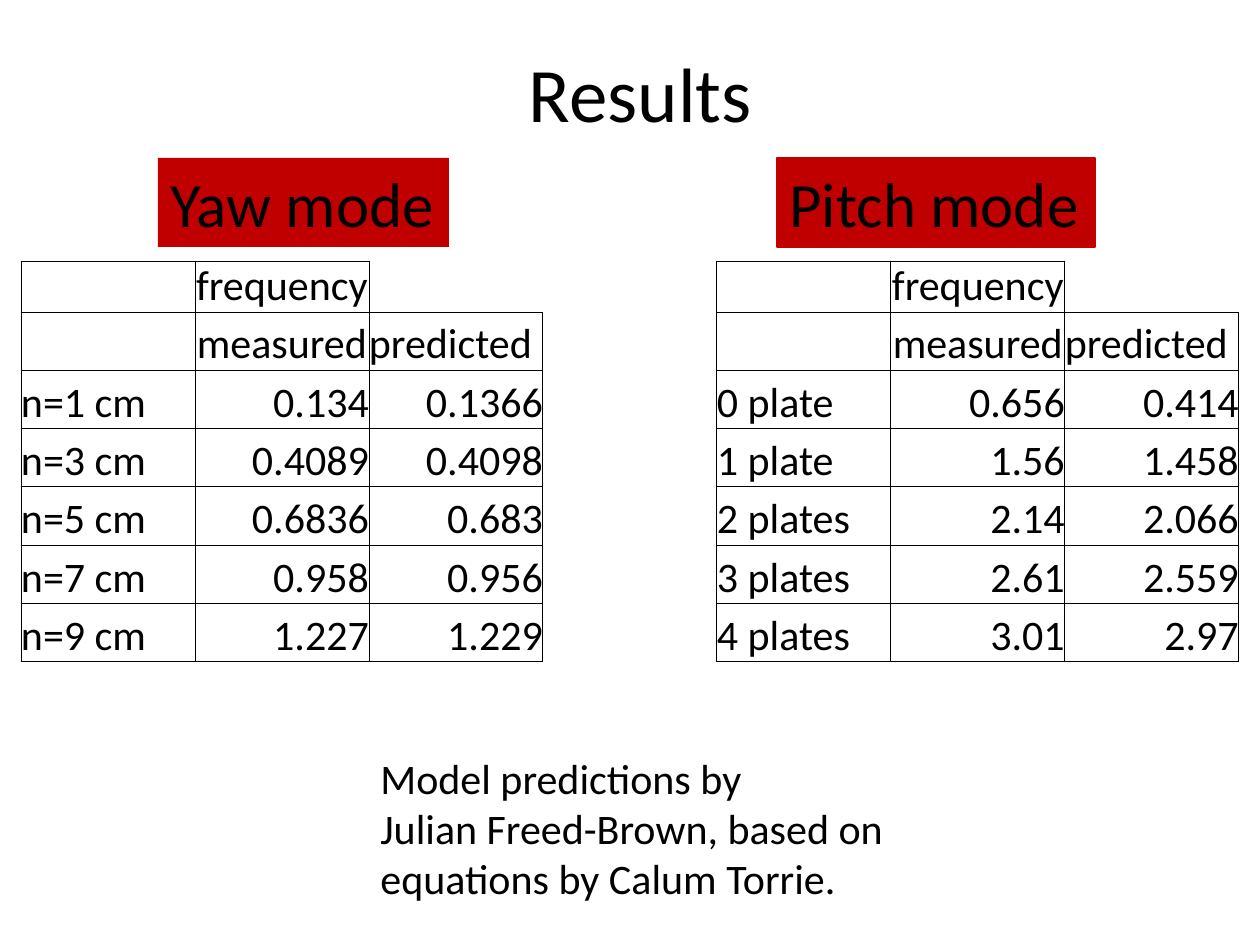
from lxml.etree import SubElement
from pptx import Presentation
from pptx.dml.color import RGBColor
from pptx.enum.shapes import MSO_SHAPE
from pptx.enum.text import MSO_ANCHOR, MSO_AUTO_SIZE, PP_ALIGN
from pptx.oxml.ns import qn
from pptx.util import Pt

# Content
TITLE = "Results"
CREDIT = [
    "Model predictions by",
    "Julian Freed-Brown, based on",
    "equations by Calum Torrie.",
]
HEADERS = [["", "frequency", None], ["", "measured", "predicted"]]
YAW = HEADERS + [
    ["n=1 cm", "0.134", "0.1366"],
    ["n=3 cm", "0.4089", "0.4098"],
    ["n=5 cm", "0.6836", "0.683"],
    ["n=7 cm", "0.958", "0.956"],
    ["n=9 cm", "1.227", "1.229"],
]
PITCH = HEADERS + [
    ["0 plate", "0.656", "0.414"],
    ["1 plate", "1.56", "1.458"],
    ["2 plates", "2.14", "2.066"],
    ["3 plates", "2.61", "2.559"],
    ["4 plates", "3.01", "2.97"],
]
# None marks a cell without a border of its own
ROWS = [yaw + [None] + pitch for yaw, pitch in zip(YAW, PITCH)]

# Boxes in px: left, top, width, height
TITLE_BOX = (105, -10, 1071, 203)
CREDIT_BOX = (368, 746, 588, 165)
TABLE_BOX = (21, 261, 1218, 401)
HEADER_HEIGHT = 51
MODES = [
    ("Yaw mode", (158, 158, 291, 89), False),
    ("Pitch mode", (777, 158, 318, 89), True),
]

BLACK = RGBColor(0, 0, 0)
RED = RGBColor(0xC0, 0, 0)
FONT = "Calibri"
EMU_PER_PX = 914400 / 126
SIDES = {"lnL": (0, -1), "lnR": (0, 1), "lnT": (-1, 0), "lnB": (1, 0)}


def px(value):
    return round(value * EMU_PER_PX)


def set_all(target, values):
    for name, value in values.items():
        setattr(target, name, value)


def write(text_frame, lines, size, alignment=PP_ALIGN.LEFT):
    for index, line in enumerate(lines):
        paragraph = text_frame.add_paragraph() if index else text_frame.paragraphs[0]
        paragraph.alignment = alignment
        run = paragraph.add_run()
        run.text = line
        set_all(run.font, {"name": FONT, "size": Pt(size)})
        run.font.color.rgb = BLACK


def has_border(row, column):
    inside = 0 <= row < len(ROWS) and 0 <= column < len(ROWS[0])
    return inside and ROWS[row][column] is not None


def draw_borders(cell, row, column):
    properties = cell._tc.get_or_add_tcPr()
    for index, (tag, (down, right)) in enumerate(SIDES.items()):
        line = properties.makeelement(qn(f"a:{tag}"), {"w": str(Pt(0.5))})
        properties.insert(index, line)
        if has_border(row, column) or has_border(row + down, column + right):
            fill = SubElement(line, qn("a:solidFill"))
            SubElement(fill, qn("a:srgbClr"), val=str(BLACK))
        else:
            SubElement(line, qn("a:noFill"))


def alignment_of(row, column):
    if column in (1, 5):
        return PP_ALIGN.RIGHT if row > 1 else PP_ALIGN.CENTER
    return PP_ALIGN.RIGHT if column in (2, 6) and row > 1 else PP_ALIGN.LEFT


presentation = Presentation()
set_all(presentation, {"slide_width": px(1260), "slide_height": px(945)})
slide = presentation.slides.add_slide(presentation.slide_layouts[5])

# Title
title = slide.shapes.title
set_all(title, dict(zip(("left", "top", "width", "height"), map(px, TITLE_BOX))))
title.text_frame.vertical_anchor = MSO_ANCHOR.MIDDLE
write(title.text_frame, [TITLE], 44, PP_ALIGN.CENTER)

# Credit
credit = slide.shapes.add_textbox(*map(px, CREDIT_BOX))
credit.text_frame.word_wrap = True
write(credit.text_frame, CREDIT, 24)

# Table of both modes, with an open column between them
table = slide.shapes.add_table(len(ROWS), len(ROWS[0]), *map(px, TABLE_BOX)).table
set_all(table, {"first_row": False, "horz_banding": False})
for column in table.columns:
    column.width = px(TABLE_BOX[2] / len(ROWS[0]))
for index, row in enumerate(table.rows):
    body_height = (TABLE_BOX[3] - HEADER_HEIGHT) / (len(ROWS) - 1)
    row.height = px(body_height if index else HEADER_HEIGHT)
for row, texts in enumerate(ROWS):
    for column, text in enumerate(texts):
        cell = table.cell(row, column)
        cell.fill.background()
        set_all(cell, {
            "margin_left": 0, "margin_right": 0, "margin_top": 0, "margin_bottom": 0,
            "vertical_anchor": MSO_ANCHOR.BOTTOM,
        })
        draw_borders(cell, row, column)
        if text:
            write(cell.text_frame, [text], 24, alignment_of(row, column))

# Mode labels
for name, box, outlined in MODES:
    label = slide.shapes.add_shape(MSO_SHAPE.RECTANGLE, *map(px, box))
    label.shadow.inherit = False
    label.fill.solid()
    label.fill.fore_color.rgb = RED
    if outlined:
        label.line.color.rgb = RED
        label.line.width = Pt(0.75)
    else:
        label.line.fill.background()
    set_all(label.text_frame, {
        "word_wrap": False,
        "auto_size": MSO_AUTO_SIZE.SHAPE_TO_FIT_TEXT,
        "vertical_anchor": MSO_ANCHOR.TOP,
    })
    write(label.text_frame, [name], 36)

presentation.save("out.pptx")
